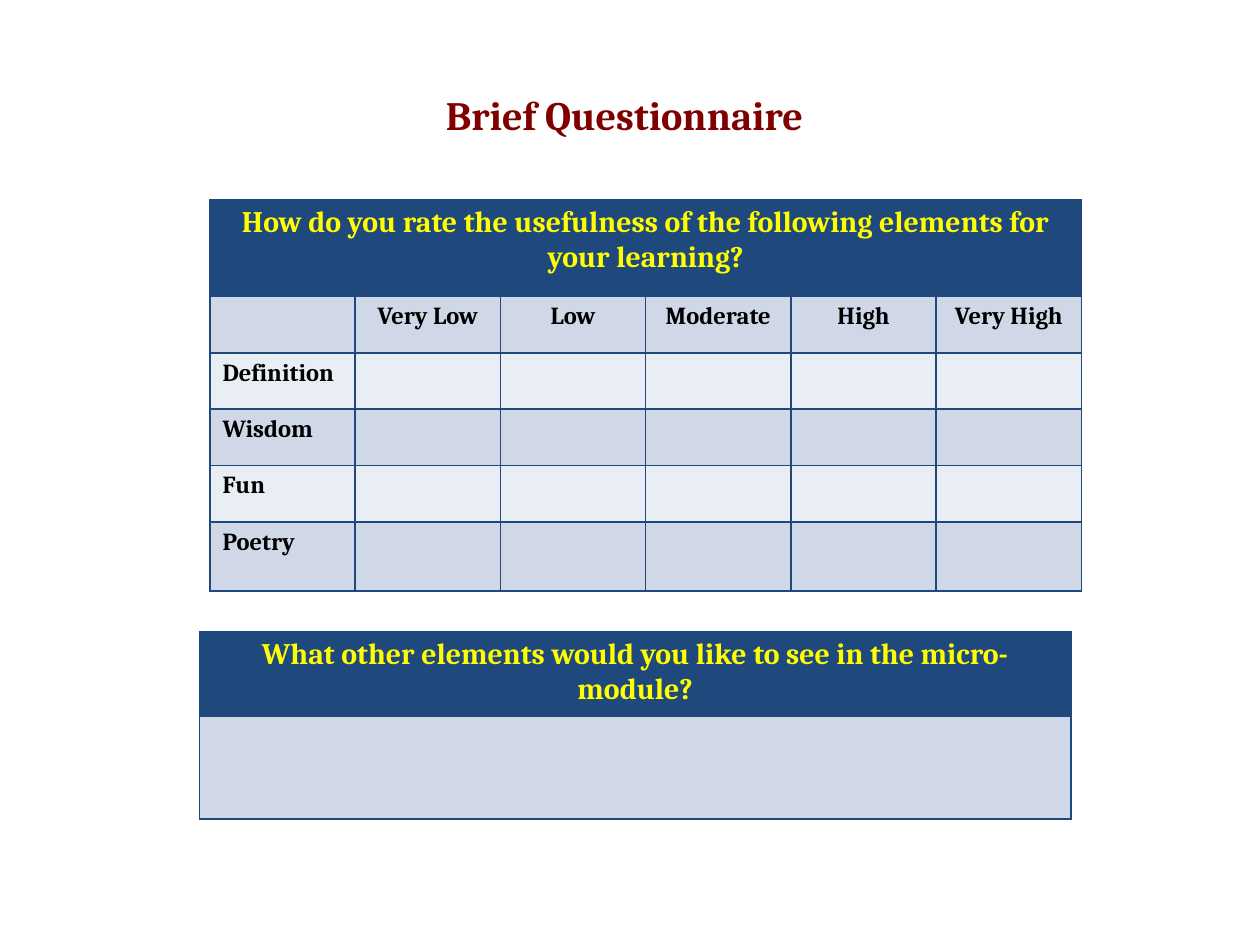
from dataclasses import dataclass

from lxml import etree
from pptx import Presentation
from pptx.dml.color import RGBColor
from pptx.enum import text
from pptx.oxml import ns
from pptx.util import Pt


@dataclass(frozen=True)
class Theme:
    font: str = "Cambria"
    maroon: str = "800000"
    navy: str = "1F497D"
    yellow: str = "FFFF00"
    black: str = "000000"
    bands: tuple = ("D0D8E8", "E9EDF4")
    title_size: int = 23
    question_size: int = 17
    label_size: int = 14
    border: int = 1


THEME = Theme()
CENTER = text.PP_ALIGN.CENTER
LEFT = text.PP_ALIGN.LEFT
RATINGS = ["Very Low", "Low", "Moderate", "High", "Very High"]
ELEMENTS = ["Definition", "Wisdom", "Fun", "Poetry"]


def write(frame, words, *, size, color, align=LEFT):
    frame.word_wrap = True
    para = frame.paragraphs[0]
    para.alignment = align
    para.font.size = Pt(size)
    if words:
        span = para.add_run()
        span.text = words
        span.font.name = THEME.font
        span.font.size = Pt(size)
        span.font.bold = True
        span.font.color.rgb = RGBColor.from_string(color)


def add_title(page, words):
    box = page.shapes.add_textbox(Pt(168), Pt(48), Pt(378), Pt(45))
    write(box.text_frame, words, size=THEME.title_size,
          color=THEME.maroon, align=CENTER)


def style_cell(cell, fill):
    properties = cell._tc.get_or_add_tcPr()
    for side in ("lnL", "lnR", "lnT", "lnB"):
        line = etree.SubElement(properties, ns.qn(f"a:{side}"), w=str(Pt(THEME.border)))
        paint = etree.SubElement(line, ns.qn("a:solidFill"))
        etree.SubElement(paint, ns.qn("a:srgbClr"), val=THEME.navy)
    cell.fill.solid()
    cell.fill.fore_color.rgb = RGBColor.from_string(fill)


def add_question(page, question, answers, *, left, top, width, heights):
    columns = len(answers[0])
    frame = page.shapes.add_table(len(heights), columns, Pt(left), Pt(top),
                                  Pt(width), Pt(sum(heights)))
    table = frame.table
    for column in table.columns:
        column.width = Pt(width / columns)
    for row, height in zip(table.rows, heights):
        row.height = Pt(height)
    for cell in table.rows[0].cells:
        style_cell(cell, THEME.navy)
    if columns > 1:
        table.cell(0, 0).merge(table.cell(0, columns - 1))
    write(table.cell(0, 0).text_frame, question, size=THEME.question_size,
          color=THEME.yellow, align=CENTER)
    for r, answer in enumerate(answers):
        for c, words in enumerate(answer):
            cell = table.cell(r + 1, c)
            style_cell(cell, THEME.bands[r % 2])
            write(cell.text_frame, words, size=THEME.label_size,
                  color=THEME.black, align=CENTER if c else LEFT)


def main():
    deck = Presentation()
    deck.slide_width, deck.slide_height = Pt(720), Pt(540)
    page = deck.slides.add_slide(deck.slide_layouts[6])
    add_title(page, "Brief Questionnaire")
    blanks = [""] * len(RATINGS)
    grid = [["", *RATINGS]] + [[element, *blanks] for element in ELEMENTS]
    add_question(
        page,
        "How do you rate the usefulness of the following elements for your learning?",
        grid, left=120, top=114, width=498,
        heights=[55.5, 32.2, 32.2, 32.2, 32.2, 39.5])
    add_question(
        page,
        "What other elements would you like to see in the micro-module?",
        [[""]], left=114, top=361, width=498, heights=[47, 59])
    deck.save("out.pptx")


if __name__ == "__main__":
    main()
